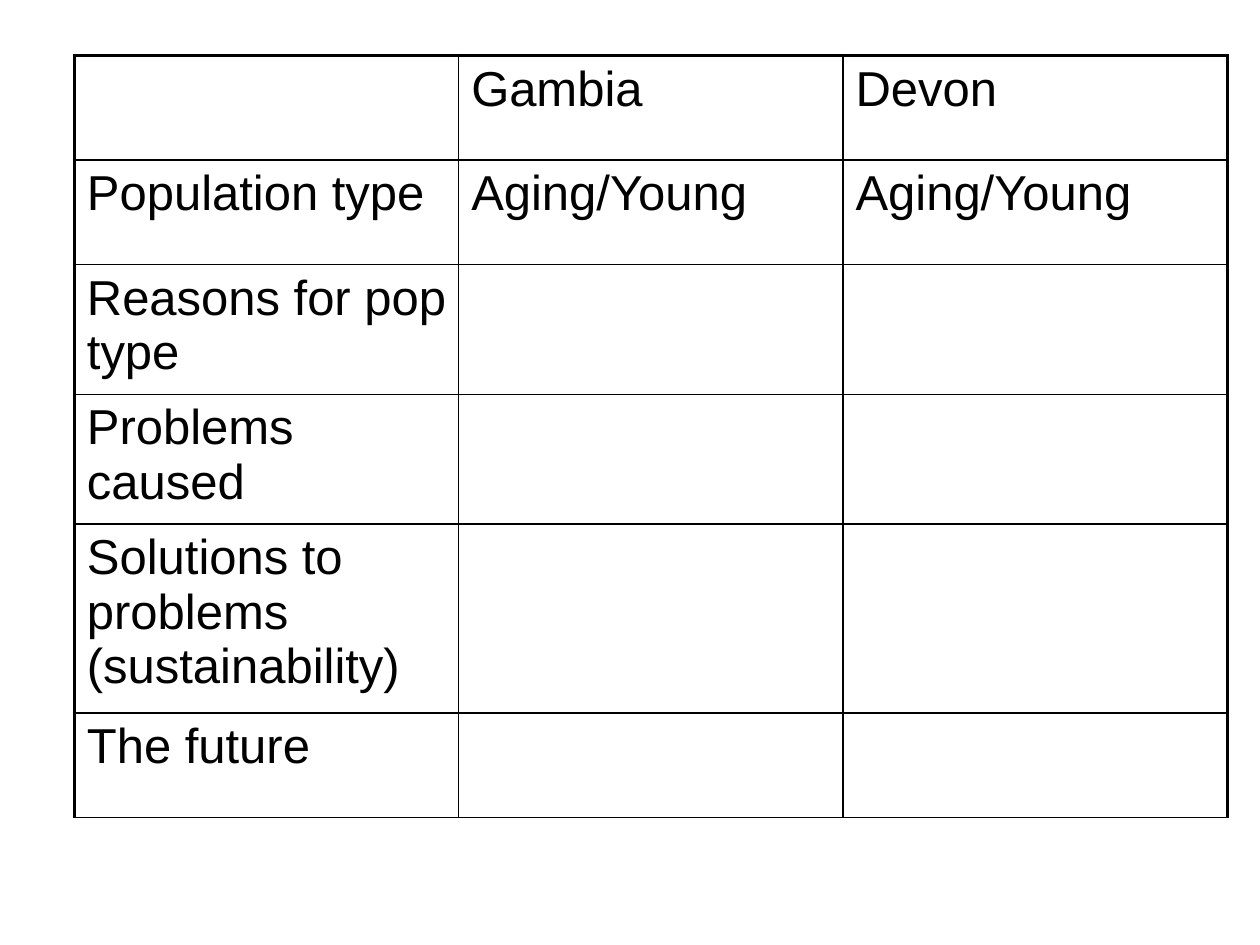
from lxml.etree import SubElement
from pptx import Presentation
from pptx.dml.color import RGBColor
from pptx.oxml.ns import qn
from pptx.util import Inches, Pt

BLACK = RGBColor(0, 0, 0)
THIN, THICK = Pt(1), Pt(2.25)
COLUMN_WIDTH = 3.05
ROW_HEIGHTS = [0.83, 0.83, 1.03, 1.03, 1.5, 0.83]
ROWS = [
    ["", "Gambia", "Devon"],
    ["Population type", "Aging/Young", "Aging/Young"],
    ["Reasons for pop type", "", ""],
    ["Problems caused", "", ""],
    ["Solutions to problems (sustainability)", "", ""],
    ["The future", "", ""],
]


def set_borders(cell, widths):
    """Draw the left, right, top and bottom borders, in that order."""
    properties = cell._tc.get_or_add_tcPr()
    for side, width in zip("LRTB", widths):
        line = SubElement(properties, qn(f"a:ln{side}"), w=str(int(width)))
        fill = SubElement(line, qn("a:solidFill"))
        SubElement(fill, qn("a:srgbClr"), val=str(BLACK))


def set_space_before(paragraph, percent):
    """Set spacing as a share of the line height."""
    spacing = SubElement(paragraph._p.get_or_add_pPr(), qn("a:spcBef"))
    SubElement(spacing, qn("a:spcPct"), val=str(percent * 1000))


def fill_cell(cell, text):
    cell.text = text
    cell.fill.background()
    paragraph = cell.text_frame.paragraphs[0]
    set_space_before(paragraph, 20)
    font = paragraph.font
    font.size, font.name, font.color.rgb = Pt(28), "Arial", BLACK
    for run in paragraph.runs:
        run.font.size, run.font.name = Pt(28), "Arial"


def add_comparison_table(slide):
    column_count = len(ROWS[0])
    table = slide.shapes.add_table(
        len(ROWS), column_count, Inches(0.59), Inches(0.44),
        Inches(COLUMN_WIDTH * column_count), Inches(sum(ROW_HEIGHTS)),
    ).table
    table.first_row = table.horz_banding = False
    for column in table.columns:
        column.width = Inches(COLUMN_WIDTH)
    for row_index, (texts, height) in enumerate(zip(ROWS, ROW_HEIGHTS)):
        table.rows[row_index].height = Inches(height)
        for column_index, text in enumerate(texts):
            cell = table.cell(row_index, column_index)
            set_borders(cell, [
                THICK if column_index == 0 else THIN,
                THICK if column_index == column_count - 1 else THIN,
                THICK if row_index == 0 else THIN,
                THIN,
            ])
            fill_cell(cell, text)


def main():
    presentation = Presentation()
    presentation.slide_width = Inches(10)
    presentation.slide_height = Inches(7.5)
    slide = presentation.slides.add_slide(presentation.slide_layouts[6])
    add_comparison_table(slide)
    presentation.save("out.pptx")


if __name__ == "__main__":
    main()
